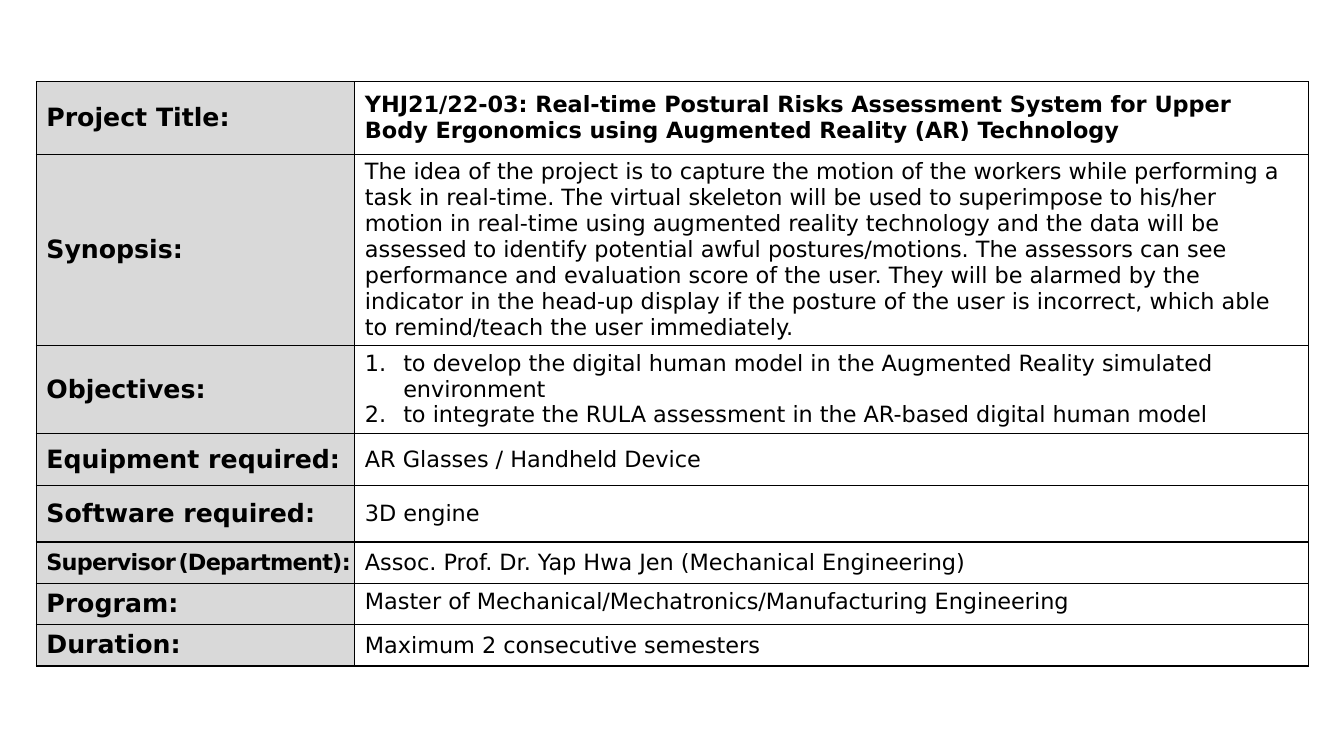
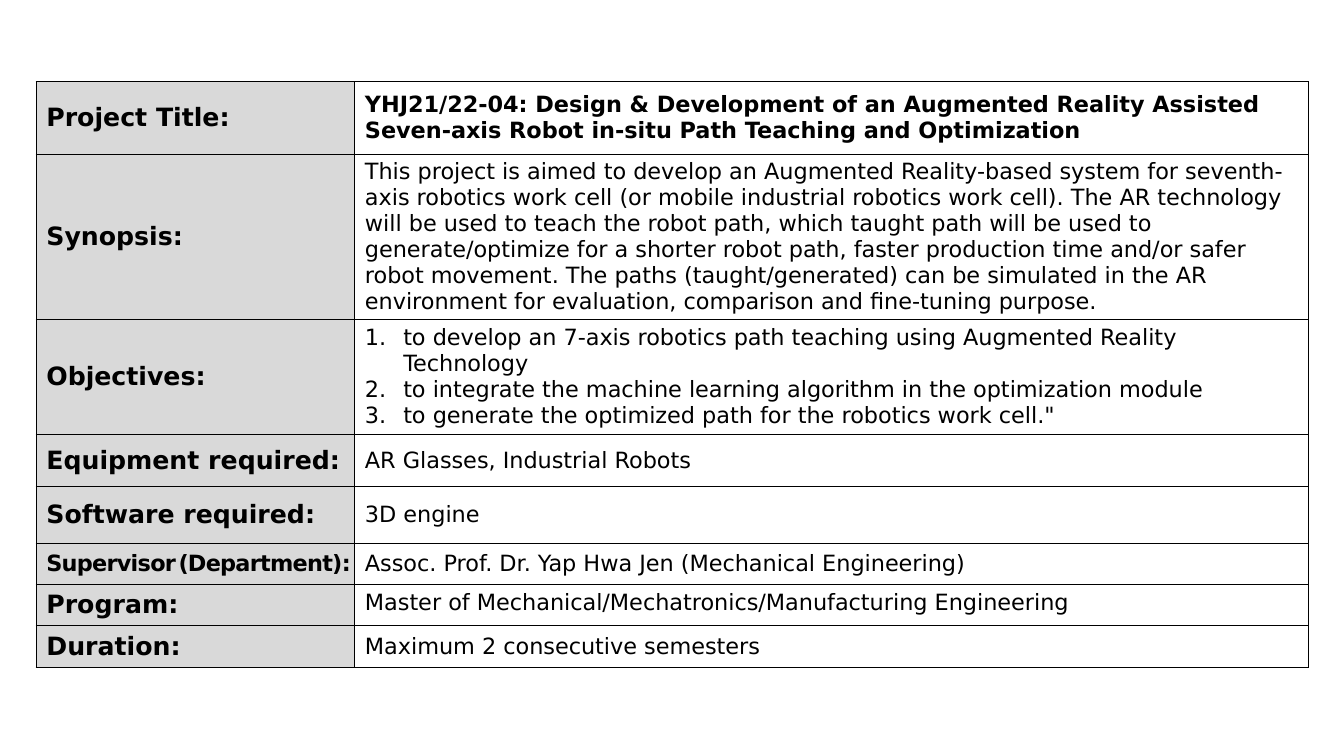
"""Build two project proposal slides, each holding one summary table."""
from lxml import etree
from pptx import Presentation
from pptx.dml.color import RGBColor
from pptx.enum import text
from pptx.oxml import ns
from pptx.util import Inches, Pt

COLORS = {"ink": "000000", "label": "D9D9D9"}
FONT = "DejaVu Sans"
LABELS = ["Project Title:", "Synopsis:", "Objectives:", "Equipment required:",
          "Software required:", "Supervisor (Department):", "Program:", "Duration:"]
COL_WIDTHS = [3.16, 9.46]
SHARED_VALUES = ["3D engine",
                 "Assoc. Prof. Dr. Yap Hwa Jen (Mechanical Engineering)",
                 "Master of Mechanical/Mechatronics/Manufacturing Engineering",
                 "Maximum 2 consecutive semesters"]
SHARED_HEIGHTS = [0.52, 0.56, 0.41, 0.41, 0.41]

PROJECTS = [
    {"heights": [0.72, 1.89, 0.87],
     "values": [
         "YHJ21/22-03: Real-time Postural Risks Assessment System for Upper Body "
         "Ergonomics using Augmented Reality (AR) Technology",
         "The idea of the project is to capture the motion of the workers while "
         "performing a task in real-time. The virtual skeleton will be used to "
         "superimpose to his/her motion in real-time using augmented reality "
         "technology and the data will be assessed to identify potential awful "
         "postures/motions. The assessors can see performance and evaluation score "
         "of the user. They will be alarmed by the indicator in the head-up display "
         "if the posture of the user is incorrect, which able to remind/teach the "
         "user immediately.",
         ["to develop the digital human model in the Augmented Reality simulated "
          "environment",
          "to integrate the RULA assessment in the AR-based digital human model"],
         "AR Glasses / Handheld Device"]},
    {"heights": [0.72, 1.64, 1.14],
     "values": [
         "YHJ21/22-04: Design & Development of an Augmented Reality Assisted "
         "Seven-axis Robot in-situ Path Teaching and Optimization",
         "This project is aimed to develop an Augmented Reality-based system for "
         "seventh-axis robotics work cell (or mobile industrial robotics work cell). "
         "The AR technology will be used to teach the robot path, which taught path "
         "will be used to generate/optimize for a shorter robot path, faster "
         "production time and/or safer robot movement. The paths (taught/generated) "
         "can be simulated in the AR environment for evaluation, comparison and "
         "fine-tuning purpose.",
         ["to develop an 7-axis robotics path teaching using Augmented Reality "
          "Technology",
          "to integrate the machine learning algorithm in the optimization module",
          "to generate the optimized path for the robotics work cell.\""],
         "AR Glasses, Industrial Robots"]},
]


def add_run(p, words, size, bold=False, spacing=None):
    r = p.add_run()
    r.text = words
    r.font.name = FONT
    r.font.size = Pt(size)
    r.font.bold = bold
    r.font.color.rgb = RGBColor.from_string(COLORS["ink"])
    if spacing is not None:
        r.font._element.set("spc", str(spacing))


def style_cell(cell, fill=None):
    cell.vertical_anchor = text.MSO_ANCHOR.MIDDLE
    tcPr = cell._tc.get_or_add_tcPr()
    for side in ("lnL", "lnR", "lnT", "lnB"):
        ln = etree.SubElement(tcPr, ns.qn("a:" + side), w=str(Pt(1)))
        solid = etree.SubElement(ln, ns.qn("a:solidFill"))
        etree.SubElement(solid, ns.qn("a:srgbClr"), val=COLORS["ink"])
    if fill:
        cell.fill.solid()
        cell.fill.fore_color.rgb = RGBColor.from_string(fill)
    else:
        cell.fill.background()


prs = Presentation()
prs.slide_width = Inches(13.33)
prs.slide_height = Inches(7.5)

for project in PROJECTS:
    s = prs.slides.add_slide(prs.slide_layouts[6])
    heights = project["heights"] + SHARED_HEIGHTS
    values = project["values"] + SHARED_VALUES
    table = s.shapes.add_table(len(LABELS), 2, Inches(0.36), Inches(0.81),
                               Inches(sum(COL_WIDTHS)), Inches(sum(heights))).table
    table.first_row = False
    table.horz_banding = False
    for col, width in zip(table.columns, COL_WIDTHS):
        col.width = Inches(width)

    for row, height, label, value in zip(table.rows, heights, LABELS, values):
        row.height = Inches(height)
        label_cell, value_cell = row.cells
        style_cell(label_cell, COLORS["label"])
        style_cell(value_cell)

        p = label_cell.text_frame.paragraphs[0]
        if label.startswith("Supervisor"):
            label_cell.margin_right = 0
            name, department = label.split(" ")
            for words, size in ((name, 16), (" ", 5), (department, 16)):
                add_run(p, words, size, True, -50)
        else:
            add_run(p, label, 18, True)

        if label == "Program:":
            value_cell.vertical_anchor = text.MSO_ANCHOR.TOP
        tf = value_cell.text_frame
        numbered = isinstance(value, list)
        for i, words in enumerate(value if numbered else [value]):
            p = tf.add_paragraph() if i else tf.paragraphs[0]
            if numbered:
                pPr = p._p.get_or_add_pPr()
                pPr.set("marL", str(Inches(0.38)))
                pPr.set("indent", str(-Inches(0.38)))
                etree.SubElement(pPr, ns.qn("a:buFont"), typeface="+mj-lt")
                etree.SubElement(pPr, ns.qn("a:buAutoNum"), type="arabicPeriod")
            add_run(p, words, 16, label == "Project Title:")

prs.save("out.pptx")
